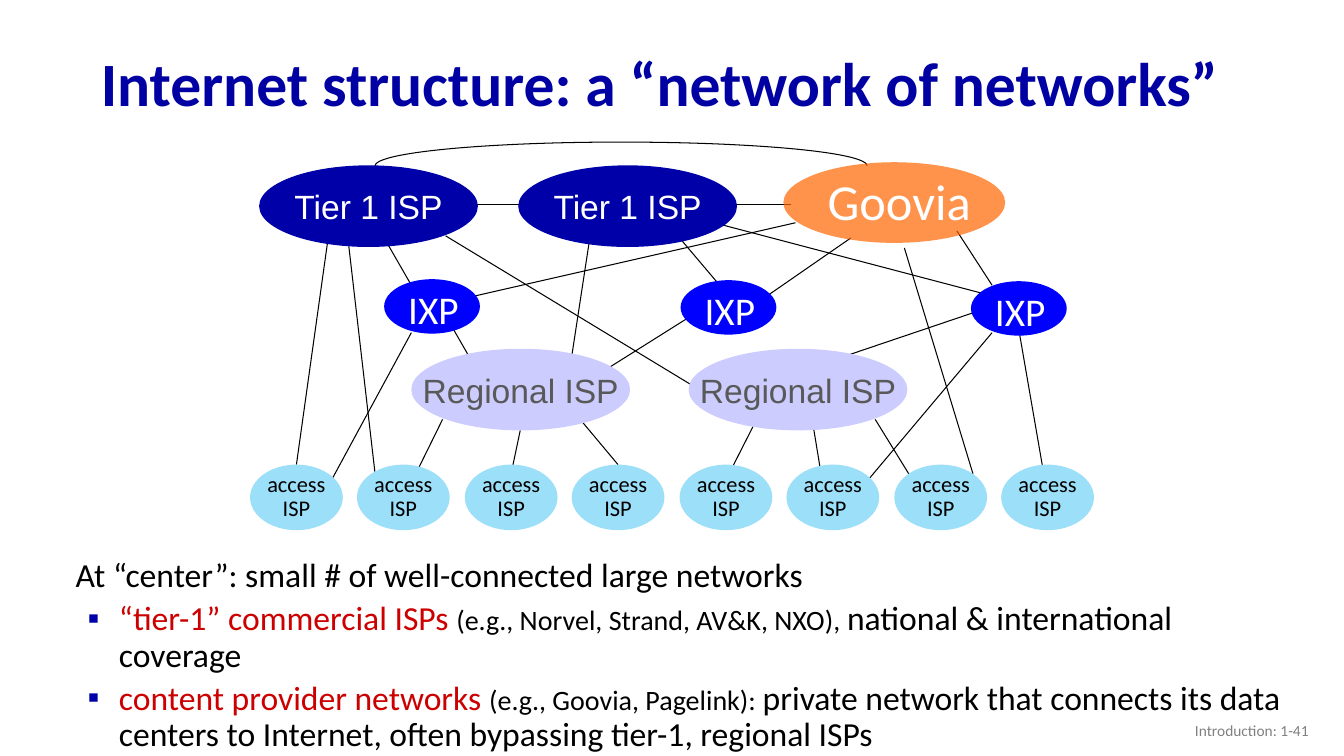
"""Builds a slide on the structure of the Internet as a network of networks."""
import lxml.etree
import pptx
import pptx.dml.color
import pptx.enum.shapes
import pptx.enum.text
import pptx.oxml.ns
import pptx.util

SCALE = 9144
COLORS = {
    "title": "0000A3", "navy": "0000A8", "blue": "0000FF", "lilac": "CCCCFF",
    "sky": "9CDFF9", "orange": "FF6600", "red": "CC0000", "black": "000000",
    "white": "FFFFFF", "dark": "595959", "gray": "808080",
}
LINKS = [
    (328, 218, 294, 461), (516, 427, 505, 479), (439, 416, 408, 479),
    (345, 236, 374, 487), (408, 330, 323, 487), (567, 406, 613, 461),
    (750, 417, 718, 480), (807, 425, 816, 480), (868, 416, 913, 489),
    (897, 246, 965, 470), (528, 203, 470, 203), (785, 203, 727, 203),
    (949, 229, 984, 283), (381, 236, 408, 283), (443, 315, 470, 362),
    (789, 221, 443, 300), (674, 236, 718, 288), (585, 236, 567, 354),
    (683, 315, 594, 371), (442, 234, 691, 385), (1011, 330, 1037, 480),
    (984, 330, 851, 488), (975, 307, 833, 355), (844, 236, 753, 299),
    (712, 222, 978, 292),
]
POINTS = [
    [("At “center”: small # of well-connected large networks", 24, "black")],
    [("“tier-1” commercial ISPs ", 24, "red"),
     ("(e.g., Norvel, Strand, AV&K, NXO), ", 20, "black"),
     ("national & international coverage", 24, "black")],
    [("content provider networks ", 24, "red"),
     ("(e.g., Goovia, Pagelink): ", 20, "black"),
     ("private network that connects its data centers to Internet, "
      "often bypassing tier-1, regional ISPs", 24, "black")],
]
ALIGN = pptx.enum.text.PP_ALIGN
ANCHOR = pptx.enum.text.MSO_ANCHOR


def px(*sizes):
    """Turn pixel lengths into EMU."""
    return [pptx.util.Emu(size * SCALE) for size in sizes]


def rgb(name):
    """Return the named colour."""
    return pptx.dml.color.RGBColor.from_string(COLORS[name])


def style(run, size, color, face="Calibri", bold=False):
    """Format one run."""
    run.font.size = pptx.util.Pt(size)
    run.font.name = face
    run.font.bold = bold
    run.font.color.rgb = rgb(color)


def write(frame, text, size, color, face="Calibri", align=ALIGN.LEFT,
          anchor=ANCHOR.MIDDLE, wrap=False, space=1.0, bold=False):
    """Fill a text frame and format its runs."""
    frame.text = text
    frame.word_wrap = wrap
    frame.vertical_anchor = anchor
    for para in frame.paragraphs:
        para.alignment = align
        para.line_spacing = space
        for run in para.runs:
            style(run, size, color, face, bold)


def place(shape, *box):
    """Move and size a shape."""
    shape.left, shape.top, shape.width, shape.height = px(*box)


def label(slide, box, *args, **kinds):
    """Add a text box."""
    write(slide.shapes.add_textbox(*px(*box)).text_frame, *args, **kinds)


def oval(slide, box, color):
    """Add a plain ellipse."""
    shape = slide.shapes.add_shape(pptx.enum.shapes.MSO_SHAPE.OVAL, *px(*box))
    shape.shadow.inherit = False
    shape.fill.solid()
    shape.fill.fore_color.rgb = rgb(color)
    shape.line.fill.background()
    return shape


def node(slide, box, color, *args, **kinds):
    """Add an ellipse with centred text."""
    write(oval(slide, box, color).text_frame, *args, align=ALIGN.CENTER, **kinds)


def stroke(shape):
    """Give a shape a thin black line."""
    shape.line.color.rgb = rgb("black")
    shape.line.width = pptx.util.Pt(0.75)


def link(slide, ends):
    """Add a straight line."""
    kind = pptx.enum.shapes.MSO_CONNECTOR.STRAIGHT
    line = slide.shapes.add_connector(kind, *px(*ends))
    stroke(line)
    lxml.etree.SubElement(line._element.spPr, pptx.oxml.ns.qn("a:effectLst"))


def arch(slide, box):
    """Add the arc over the top row."""
    arc = slide.shapes.add_shape(pptx.enum.shapes.MSO_SHAPE.ARC, *px(*box))
    arc.shadow.inherit = False
    arc.adjustments[0] = 106.82
    arc.adjustments[1] = 0
    arc.fill.background()
    stroke(arc)


def bullet(para, mark):
    """Set the indent and the mark of a list item."""
    qn = pptx.oxml.ns.qn
    props = para._p.get_or_add_pPr()
    left, hang = px(50, -31) if mark else px(7, 0)
    props.set("marL", str(left))
    props.set("indent", str(hang))
    if not mark:
        lxml.etree.SubElement(props, qn("a:buNone"))
        return
    tint = lxml.etree.SubElement(props, qn("a:buClr"))
    lxml.etree.SubElement(tint, qn("a:srgbClr"), val=COLORS["navy"])
    lxml.etree.SubElement(props, qn("a:buFont"), typeface="Arial")
    lxml.etree.SubElement(props, qn("a:buChar"), char=mark)


def points(frame):
    """Write the list below the graph."""
    frame.word_wrap = True
    frame.auto_size = pptx.enum.text.MSO_AUTO_SIZE.NONE
    frame.vertical_anchor = ANCHOR.TOP
    for i, parts in enumerate(POINTS):
        para = frame.add_paragraph() if i else frame.paragraphs[0]
        para.level = 1 if i else 0
        para.line_spacing = 0.9
        para.space_before = pptx.util.Pt(5 if i else 10)
        bullet(para, "▪" if i else "")
        for text, size, color in parts:
            run = para.add_run()
            run.text = text
            style(run, size, color)


def graph(slide):
    """Draw the links and the networks."""
    for ends in LINKS:
        link(slide, ends)
    arch(slide, (372, 141, 488, 47))
    for x in (257, 514):
        node(slide, (x, 164, 217, 81), "navy", "Tier 1 ISP", 24, "white", "Arial")
    for x in (408, 683):
        node(slide, (x, 346, 217, 81), "lilac", "Regional ISP", 24, "dark", "Arial")
    for i in range(8):
        node(slide, (248 + 213 * i // 2, 461, 92, 65), "sky", "access\nISP",
             16, "black", space=0.9)
    for x, y in ((381, 277), (675, 278), (963, 279)):
        oval(slide, (x, y, 95, 54), "blue")
        label(slide, (x + 14, y + 1, 71, 54), "IXP", 28, "white", anchor=ANCHOR.TOP)
    cloud = oval(slide, (777, 161, 220, 80), "orange")
    qn = pptx.oxml.ns.qn
    tint = cloud._element.spPr.find(qn("a:solidFill")).find(qn("a:srgbClr"))
    lxml.etree.SubElement(tint, qn("a:alpha"), val="70000")
    label(slide, (811, 164, 166, 71), "Goovia", 36, "white", anchor=ANCHOR.TOP)


def main():
    """Build and save the deck."""
    deck = pptx.Presentation()
    deck.slide_width, deck.slide_height = px(1333, 750)
    slide = deck.slides.add_slide(deck.slide_layouts[1])
    title, body = slide.placeholders
    place(title, 90, 37, 1150, 98)
    write(title.text_frame, "Internet structure: a “network of networks”", 44,
          "title", wrap=True, space=0.9, bold=True)
    place(body, 58, 549, 1234, 200)
    points(body.text_frame)
    label(slide, (1008, 705, 300, 40), "Introduction: 1-41", 11, "gray",
          align=ALIGN.RIGHT, wrap=True)
    graph(slide)
    deck.save("out.pptx")


if __name__ == "__main__":
    main()
